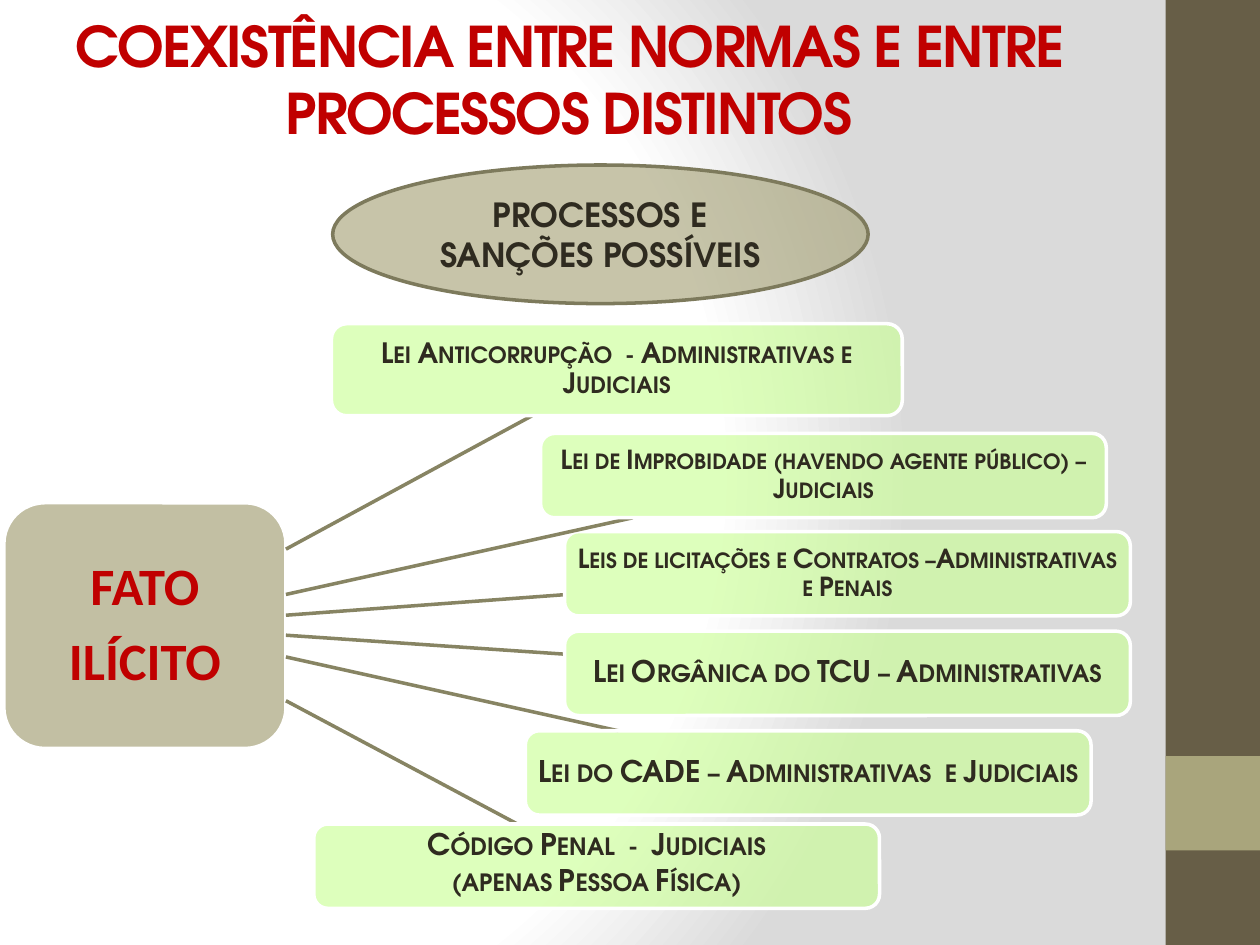
"""Build a slide linking an unlawful act to the proceedings and sanctions it may face."""
from dataclasses import dataclass

import pptx
import pptx.dml.color
import pptx.enum.shapes
import pptx.enum.text
import pptx.oxml
import pptx.oxml.ns
import pptx.presentation
import pptx.shapes.autoshape
import pptx.slide
import pptx.util

Pt = pptx.util.Pt
RGBColor = pptx.dml.color.RGBColor
MSO_SHAPE = pptx.enum.shapes.MSO_SHAPE
qn = pptx.oxml.ns.qn

WHITE = RGBColor(0xFF, 0xFF, 0xFF)
MIST = RGBColor(0xDA, 0xDA, 0xDA)
RED = RGBColor(0xC0, 0x00, 0x00)
INK = RGBColor(0x2F, 0x2B, 0x20)
BROWN = RGBColor(0x67, 0x5E, 0x47)
SAND = RGBColor(0xA9, 0xA5, 0x7C)
OLIVE = RGBColor(0x7D, 0x7A, 0x5C)
SPOKE = RGBColor(0x87, 0x84, 0x63)
LIME = RGBColor(0xCC, 0xFF, 0x99)

DISPLAY_FONT = "TeX Gyre Adventor"
FACT_FONT = "Calibri"


@dataclass(frozen=True)
class Area:
    left: float
    top: float
    width: float
    height: float

    @property
    def center(self) -> tuple[float, float]:
        return self.left + self.width / 2, self.top + self.height / 2

    def edge_toward(self, other: "Area") -> tuple[float, float]:
        x, y = self.center
        dx, dy = other.center[0] - x, other.center[1] - y
        share = min(self.width / 2 / abs(dx), self.height / 2 / abs(dy))
        return x + share * dx, y + share * dy


@dataclass(frozen=True)
class Lettering:
    size: float
    color: RGBColor = INK
    font: str = DISPLAY_FONT
    line_spacing: float = 1.0
    space_after: float = 0.0


@dataclass(frozen=True)
class Law:
    lines: tuple[str, ...]
    left: float
    top: float
    size: float
    width: float = 323.3
    height: float = 48.2
    line_spacing: float = 0.9

    @property
    def area(self) -> Area:
        return Area(self.left, self.top, self.width, self.height)


FACT_AREA = Area(2.2, 287.3, 161.2, 140.4)
LAWS = (
    Law(("Lei Anticorrupção  - Administrativas e Judiciais",), 189.4, 185, 16, 326.2, 52.6),
    Law(("Leis de licitações e Contratos –Administrativas e Penais",), 322.6, 303.8, 15),
    Law(("Lei Orgânica do TCU – Administrativas",), 322.6, 360.7, 17),
    Law(("Lei do CADE – Administrativas  e Judiciais",), 300.2, 417.6, 17),
    Law(("Código Penal  -  Judiciais", "(apenas Pessoa Física)"), 179.3, 470.9, 17, line_spacing=0.7),
    Law(("Lei de Improbidade (havendo agente público) –Judiciais",), 308.9, 247.7, 15),
)


def place(shape: pptx.shapes.autoshape.Shape, area: Area) -> None:
    shape.left, shape.top = Pt(area.left), Pt(area.top)
    shape.width, shape.height = Pt(area.width), Pt(area.height)


def write(shape: pptx.shapes.autoshape.Shape, lines: tuple[str, ...], lettering: Lettering) -> None:
    frame = shape.text_frame
    frame.word_wrap = True
    frame.auto_size = pptx.enum.text.MSO_AUTO_SIZE.NONE
    frame.vertical_anchor = pptx.enum.text.MSO_ANCHOR.MIDDLE
    for index, line in enumerate(lines):
        paragraph = frame.add_paragraph() if index else frame.paragraphs[0]
        paragraph.alignment = pptx.enum.text.PP_ALIGN.CENTER
        paragraph.line_spacing = lettering.line_spacing
        paragraph.space_before = Pt(0)
        paragraph.space_after = Pt(lettering.space_after * lettering.size)
        run = paragraph.add_run()
        run.text = line
        run.font.name = lettering.font
        run.font.size = Pt(lettering.size)
        run.font.bold = True
        run.font.color.rgb = lettering.color


def set_run_attribute(shape: pptx.shapes.autoshape.Shape, name: str, value: str) -> None:
    for properties in shape.element.iter(qn("a:rPr")):
        properties.set(name, value)


def set_margins(shape: pptx.shapes.autoshape.Shape, margin: float) -> None:
    frame = shape.text_frame
    frame.margin_left = frame.margin_right = Pt(margin)
    frame.margin_top = frame.margin_bottom = Pt(margin)


def add_panel(
    slide: pptx.slide.Slide,
    kind: MSO_SHAPE,
    area: Area,
    fill: RGBColor,
    outline: RGBColor | None = None,
    opacity: int = 100,
) -> pptx.shapes.autoshape.Shape:
    panel = slide.shapes.add_shape(kind, 0, 0, 0, 0)
    place(panel, area)
    panel.shadow.inherit = False
    panel.fill.solid()
    panel.fill.fore_color.rgb = fill
    if opacity < 100:
        tint = panel.element.spPr.find(qn("a:solidFill")).find(qn("a:srgbClr"))
        tint.makeelement(qn("a:alpha"))
        alpha = tint.makeelement(qn("a:alpha"), {"val": str(opacity * 1000)})
        tint.append(alpha)
    if outline is None:
        panel.line.fill.background()
    else:
        panel.line.color.rgb = outline
        panel.line.width = Pt(2)
    return panel


def add_spoke(slide: pptx.slide.Slide, source: Area, target: Area) -> None:
    ends = (*source.edge_toward(target), *target.edge_toward(source))
    spoke = slide.shapes.add_connector(
        pptx.enum.shapes.MSO_CONNECTOR.STRAIGHT, *(Pt(end) for end in ends)
    )
    spoke.line.color.rgb = SPOKE
    spoke.line.width = Pt(2)
    properties = spoke.element.spPr
    properties.append(properties.makeelement(qn("a:effectLst")))


def paint_background(slide: pptx.slide.Slide) -> None:
    slide.background.fill.gradient()
    gradient = next(slide.element.iter(qn("a:gradFill")))
    stops = "".join(
        f'<a:gs pos="{position * 1000}"><a:srgbClr val="{color}"/></a:gs>'
        for position, color in ((0, WHITE), (75, WHITE), (100, MIST))
    )
    radial = pptx.oxml.parse_xml(
        f'<a:gradFill {pptx.oxml.ns.nsdecls("a")} rotWithShape="1"><a:gsLst>{stops}</a:gsLst>'
        '<a:path path="circle"><a:fillToRect l="20000" t="50000" r="100000" b="50000"/></a:path>'
        "</a:gradFill>"
    )
    gradient.getparent().replace(gradient, radial)


def main() -> None:
    presentation = pptx.Presentation()
    presentation.slide_width, presentation.slide_height = Pt(720), Pt(540)
    slide = presentation.slides.add_slide(presentation.slide_layouts[5])
    paint_background(slide)
    add_panel(slide, MSO_SHAPE.RECTANGLE, Area(666, 0, 54, 540), BROWN)
    add_panel(slide, MSO_SHAPE.RECTANGLE, Area(666, 432, 54, 54), SAND)

    heading = slide.shapes.title
    place(heading, Area(25.2, 0, 599.8, 90))
    write(heading, ("COEXISTÊNCIA ENTRE NORMAS E ENTRE PROCESSOS DISTINTOS",), Lettering(32, RED))
    set_run_attribute(heading, "spc", "-100")

    fact = add_panel(slide, MSO_SHAPE.ROUNDED_RECTANGLE, FACT_AREA, SAND, WHITE, 70)
    set_margins(fact, 6)
    write(fact, ("FATO", "ILÍCITO"), Lettering(30, RED, FACT_FONT, 0.9, 0.35))

    for law in LAWS:
        add_spoke(slide, FACT_AREA, law.area)
        panel = add_panel(slide, MSO_SHAPE.ROUNDED_RECTANGLE, law.area, LIME, WHITE, 65)
        set_margins(panel, 1)
        write(panel, law.lines, Lettering(law.size, line_spacing=law.line_spacing, space_after=0.35))
        set_run_attribute(panel, "cap", "small")

    sanctions = add_panel(slide, MSO_SHAPE.OVAL, Area(190.1, 94.3, 306, 79.2), SAND, OLIVE, 65)
    write(sanctions, ("PROCESSOS E", "SANÇÕES POSSÍVEIS"), Lettering(19))
    presentation.save("out.pptx")


if __name__ == "__main__":
    main()
